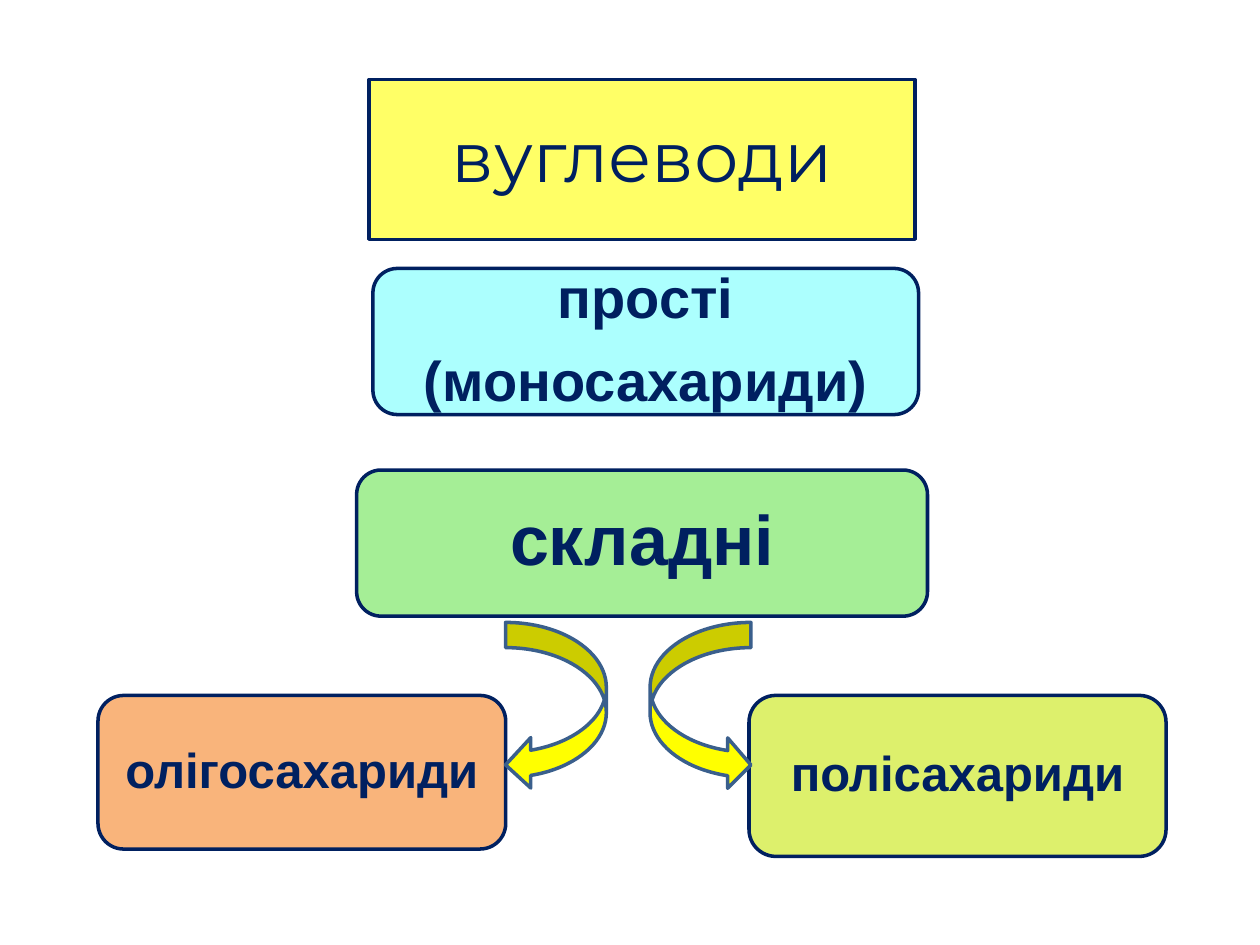
from dataclasses import dataclass

from pptx import Presentation
from pptx.dml.color import RGBColor
from pptx.enum.shapes import MSO_SHAPE as Preset
from pptx.enum.text import MSO_ANCHOR as Anchor, PP_ALIGN as Align
from pptx.util import Pt

COLORS = {
    "navy": "002060",
    "steel": "3A5F8C",
    "lemon": "FFFF66",
    "cyan": "ACFFFE",
    "green": "A5EE96",
    "lime": "DDF06C",
    "orange": "F9B47B",
    "yellow": "FFFF00",
}
ROUNDED = Preset.FLOWCHART_ALTERNATE_PROCESS
SPACE_AFTER_RATIO = 0.4


@dataclass(frozen=True)
class Box:
    lines: tuple[str, ...]
    left: float
    top: float
    width: float
    height: float
    fill: str
    size: float
    inset: float
    preset: Preset = ROUNDED
    font: str = "Arial"
    bold: bool = True


@dataclass(frozen=True)
class Arrow:
    preset: Preset
    left: float
    head_depth: float


BOXES = [
    Box(("прості", "(моносахариди)"), 213.1, 153.4, 311.8, 83.5, "cyan", 32, 9.4),
    Box(("вуглеводи",), 211, 45.4, 311.8, 91.4, "lemon", 40, 12.2,
        preset=Preset.RECTANGLE, font="Montserrat", bold=False),
    Box(("складні",), 203.8, 268.6, 326.2, 83.5, "green", 40, 12.2),
    Box(("полісахариди",), 428, 397.4, 238.3, 92, "lime", 28, 8.6),
    Box(("олігосахариди",), 56, 397.4, 233, 87.8, "orange", 28, 8.6),
]

# Both arrows share one size and height on the slide
ARROW_TOP, ARROW_WIDTH, ARROW_HEIGHT = 355.7, 57.6, 95.8
ARROWS = [
    Arrow(Preset.CURVED_LEFT_ARROW, 288.9, 0.25),
    Arrow(Preset.CURVED_RIGHT_ARROW, 371.5, 0.23),
]


def color(name: str) -> RGBColor:
    return RGBColor.from_string(COLORS[name])


def add_outlined_shape(slide, preset: Preset, left: float, top: float,
                       width: float, height: float, *, fill: str, line: str):
    shape = slide.shapes.add_shape(preset, Pt(left), Pt(top), Pt(width), Pt(height))
    shape.shadow.inherit = False
    shape.fill.solid()
    shape.fill.fore_color.rgb = color(fill)
    shape.line.color.rgb = color(line)
    shape.line.width = Pt(2)
    return shape


def write_text(shape, lines: tuple[str, ...], *, size: float, font: str,
               bold: bool, inset: float) -> None:
    frame = shape.text_frame
    frame.word_wrap = True
    frame.vertical_anchor = Anchor.MIDDLE
    frame.margin_left = frame.margin_right = Pt(inset)
    frame.margin_top = frame.margin_bottom = Pt(inset)
    for index, line in enumerate(lines):
        paragraph = frame.add_paragraph() if index else frame.paragraphs[0]
        paragraph.alignment = Align.CENTER
        paragraph.line_spacing = 0.9
        paragraph.space_after = Pt(size * SPACE_AFTER_RATIO)
        run = paragraph.add_run()
        run.text = line
        run.font.name = font
        run.font.size = Pt(size)
        run.font.bold = bold
        run.font.color.rgb = color("navy")


def draw_box(slide, box: Box) -> None:
    shape = add_outlined_shape(slide, box.preset, box.left, box.top, box.width,
                               box.height, fill=box.fill, line="navy")
    write_text(shape, box.lines, size=box.size, font=box.font,
               bold=box.bold, inset=box.inset)


def draw_arrow(slide, arrow: Arrow) -> None:
    shape = add_outlined_shape(slide, arrow.preset, arrow.left, ARROW_TOP, ARROW_WIDTH,
                               ARROW_HEIGHT, fill="yellow", line="steel")
    shape.adjustments[2] = arrow.head_depth


def main() -> None:
    presentation = Presentation()
    presentation.slide_width, presentation.slide_height = Pt(720), Pt(540)
    slide = presentation.slides.add_slide(presentation.slide_layouts[6])

    # Classification boxes
    for box in BOXES:
        draw_box(slide, box)

    # Curved arrows to the two complex groups
    for arrow in ARROWS:
        draw_arrow(slide, arrow)

    presentation.save("out.pptx")


if __name__ == "__main__":
    main()
